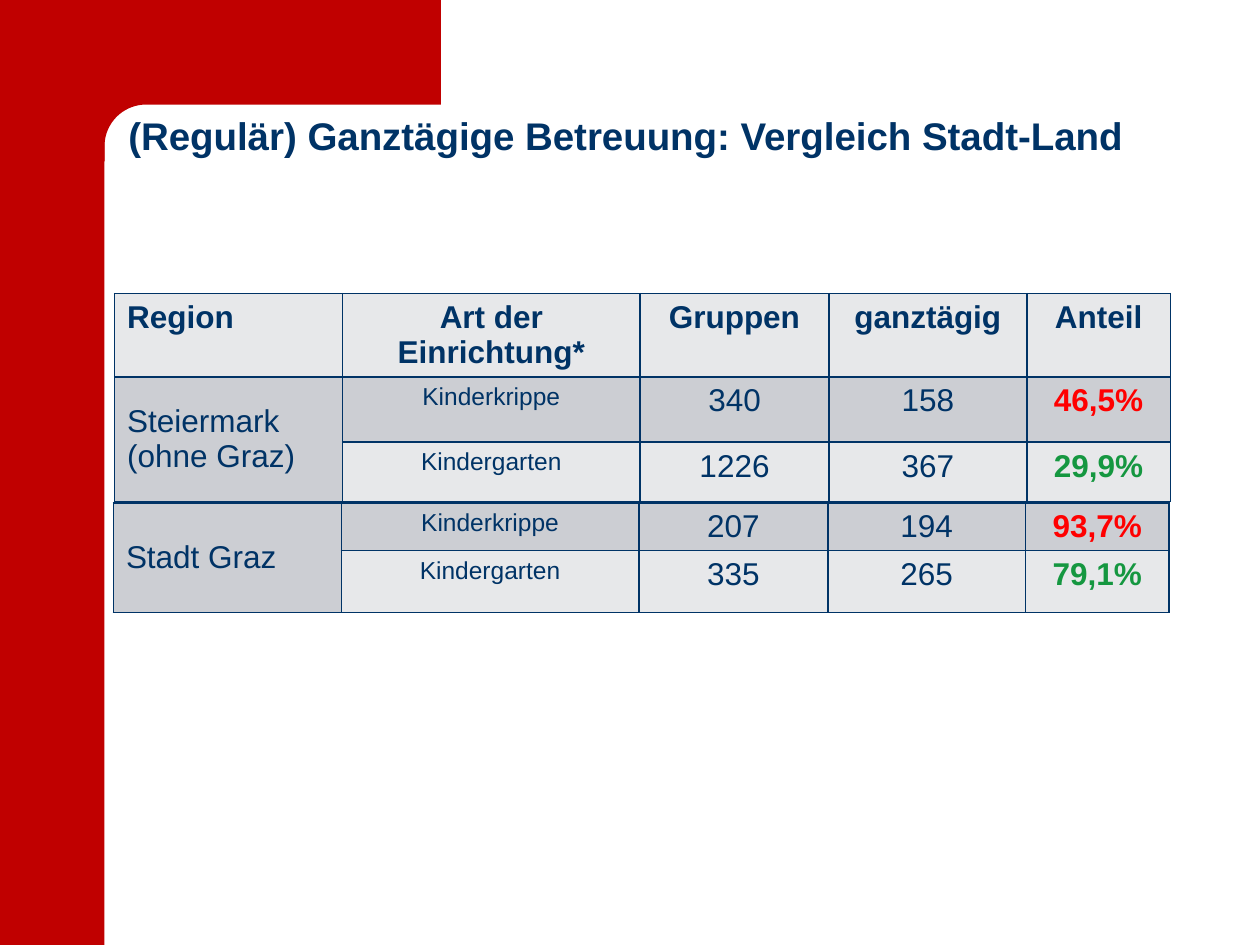
import math
from dataclasses import dataclass

from lxml import etree
from pptx import Presentation
from pptx import util as u
from pptx.dml.color import RGBColor
from pptx.enum import shapes, text
from pptx.oxml import ns

Inches = u.Inches


@dataclass(frozen=True)
class Theme:
    font: str = "Arial"
    navy: str = "003366"
    red: str = "C00000"
    light: str = "E7E8EA"
    dark: str = "CCCED3"
    high: str = "FF0000"
    low: str = "159740"
    title: int = 22
    body: int = 18
    small: int = 14


theme = Theme()


def write(frame, wording, size=theme.body, color=theme.navy, bold=False, align=None):
    para = frame.paragraphs[0]
    para.alignment = align
    span = para.add_run()
    span.text = wording
    formats = {"name": theme.font, "size": u.Pt(size), "bold": bold}
    for name, value in formats.items():
        setattr(span.font, name, value)
    span.font.color.rgb = RGBColor.from_string(color)
    return para


def add_grid(page, left, top, columns, heights, rows):
    """Add a bordered table; each cell is (wording, fill, text format)."""
    frame = page.shapes.add_table(
        len(rows), len(columns), Inches(left), Inches(top),
        Inches(sum(columns)), Inches(sum(heights)))
    table = frame.table
    table.first_row = table.horz_banding = False
    for column, width in zip(table.columns, columns):
        column.width = Inches(width)
    for row, height in zip(table.rows, heights):
        row.height = Inches(height)
    for r, row in enumerate(rows):
        for c, (wording, fill, style) in enumerate(row):
            cell = table.cell(r, c)
            properties = cell._tc.get_or_add_tcPr()
            for side in ("a:lnL", "a:lnR", "a:lnT", "a:lnB"):
                line = etree.SubElement(properties, ns.qn(side), w=str(u.Pt(1)))
                solid = etree.SubElement(line, ns.qn("a:solidFill"))
                etree.SubElement(solid, ns.qn("a:srgbClr"), val=theme.navy)
            cell.fill.solid()
            cell.fill.fore_color.rgb = RGBColor.from_string(fill)
            if wording:
                write(cell.text_frame, wording, **style)
    # The region spans the last two rows
    region = table.cell(len(rows) - 2, 0)
    region.merge(table.cell(len(rows) - 1, 0))
    region.vertical_anchor = text.MSO_ANCHOR.MIDDLE


deck = Presentation()
deck.slide_width, deck.slide_height = Inches(10), Inches(7.5)
page = deck.slides.add_slide(deck.slide_layouts[6])

# Red band on the left and corner block with a rounded inner edge
band = page.shapes.add_shape(
    shapes.MSO_SHAPE.RECTANGLE, 0, 0, Inches(0.83), Inches(7.5))
radius, center = 0.33, 1.16
curve = [(center - radius * math.sin(math.radians(angle)),
          center - radius * math.cos(math.radians(angle)))
         for angle in range(0, 91, 5)]
outline = [(3.5, 0), (3.5, 0.83), *curve, (0.83, 1.28), (0.5, 1.28), (0.5, 0)]
points = [(Inches(x), Inches(y)) for x, y in outline]
builder = page.shapes.build_freeform(*points[0])
builder.add_line_segments(points[1:], close=True)
corner = builder.convert_to_shape()
for shape in (band, corner):
    shape.shadow.inherit = False
    shape.fill.solid()
    shape.fill.fore_color.rgb = RGBColor.from_string(theme.red)
    shape.line.fill.background()

# Table contents
center_text = {"align": text.PP_ALIGN.CENTER}
headings = ["Region", "Art der Einrichtung*", "Gruppen", "ganztägig", "Anteil"]
header = [(heading, theme.light, {"bold": True, **(center_text if i else {})})
          for i, heading in enumerate(headings)]
regions = [
    ("Steiermark (ohne Graz)", [("Kinderkrippe", "340", "158", "46,5%"),
                                ("Kindergarten", "1226", "367", "29,9%")]),
    ("Stadt Graz", [("Kinderkrippe", "207", "194", "93,7%"),
                    ("Kindergarten", "335", "265", "79,1%")]),
]
blocks = []
for region, records in regions:
    block = []
    for label, record, fill, accent in zip(
            (region, ""), records, (theme.dark, theme.light), (theme.high, theme.low)):
        kind, groups, full_day, share = record
        block.append([
            (label, theme.dark, {}),
            (kind, fill, {"size": theme.small, **center_text}),
            (groups, fill, center_text),
            (full_day, fill, center_text),
            (share, fill, {"color": accent, "bold": True, **center_text}),
        ])
    blocks.append(block)

# Two stacked tables: region without the city, then the city
columns = [1.81, 2.36, 1.5, 1.57, 1.14]
add_grid(page, 0.91, 2.33, columns, [0.66, 0.52, 0.47], [header, *blocks[0]])
add_grid(page, 0.9, 3.99, columns, [0.38, 0.49], blocks[1])

# Title
box = page.shapes.add_textbox(Inches(0.92), Inches(0.84), Inches(8.67), Inches(0.63))
box.text_frame.word_wrap = True
write(box.text_frame, "(Regulär) Ganztägige Betreuung: Vergleich Stadt-Land",
      size=theme.title, bold=True)

deck.save("out.pptx")
